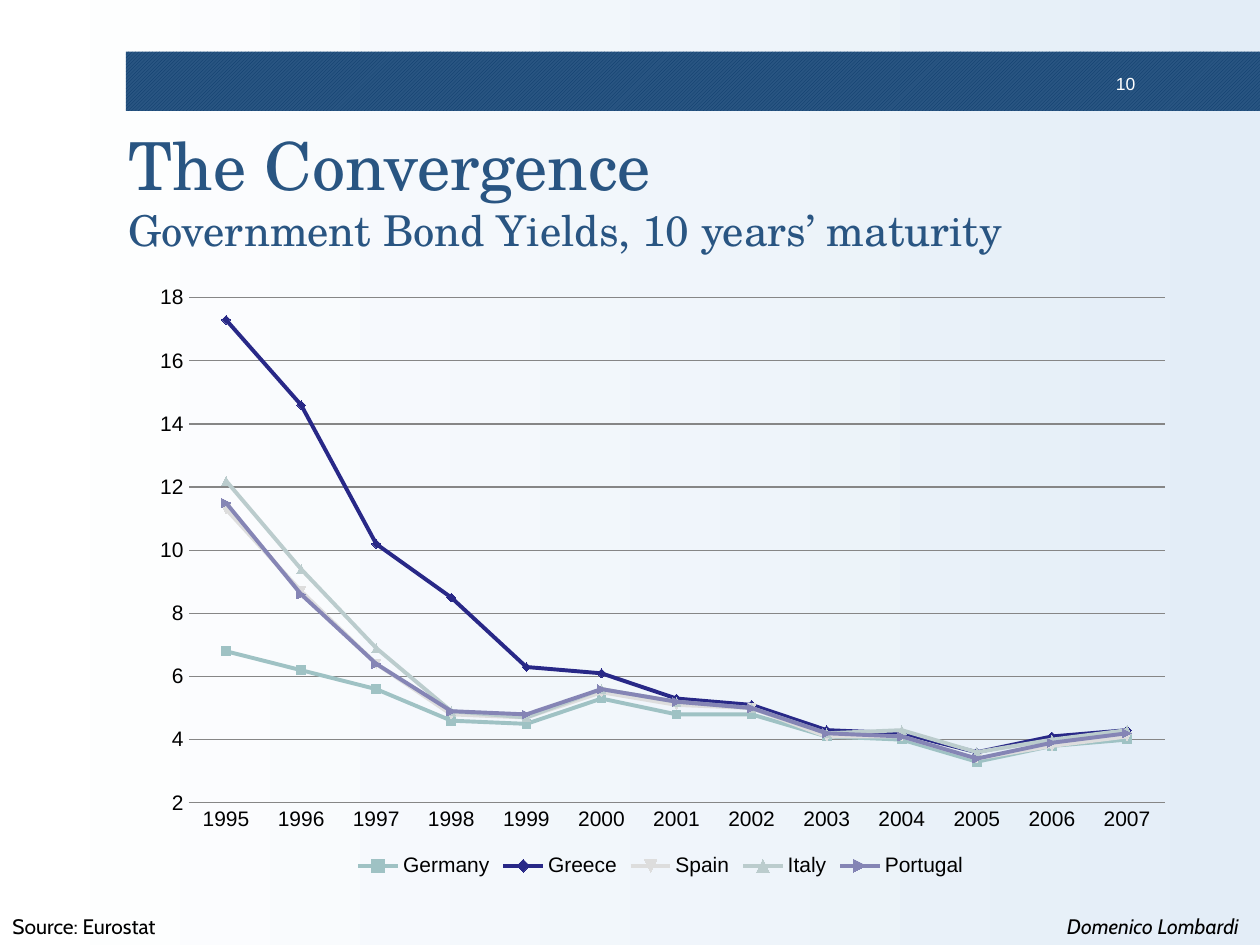
from lxml import etree
from pptx import Presentation
from pptx.chart.data import CategoryChartData
from pptx.dml.color import RGBColor
from pptx.enum.chart import XL_CHART_TYPE, XL_LEGEND_POSITION, XL_TICK_MARK
from pptx.enum.dml import MSO_PATTERN
from pptx.enum.shapes import MSO_SHAPE
from pptx.enum.text import MSO_ANCHOR, PP_ALIGN
from pptx.oxml.ns import qn
from pptx.util import Inches, Pt

LINES = XL_CHART_TYPE.LINE_MARKERS
BOTTOM = XL_LEGEND_POSITION.BOTTOM
NO_TICK = XL_TICK_MARK.NONE
HATCH = MSO_PATTERN.LIGHT_UPWARD_DIAGONAL
RECT = MSO_SHAPE.RECTANGLE
TOP, MIDDLE = MSO_ANCHOR.TOP, MSO_ANCHOR.MIDDLE
LEFT, CENTER, RIGHT = PP_ALIGN.LEFT, PP_ALIGN.CENTER, PP_ALIGN.RIGHT

COLORS = {
    "white": "FFFFFF", "sky": "E3EDF7", "navy": "083868", "blue": "295582",
    "black": "000000", "grid": "868686",
    "Germany": "9FC2C4", "Greece": "282887", "Spain": "DDDDDD",
    "Italy": "BBCCCD", "Portugal": "8585B5",
}

YIELDS = {
    "Germany": (6.8, 6.2, 5.6, 4.6, 4.5, 5.3, 4.8, 4.8, 4.1, 4, 3.3, 3.8, 4),
    "Greece": (17.3, 14.6, 10.2, 8.5, 6.3, 6.1, 5.3, 5.1, 4.3, 4.2, 3.6, 4.1, 4.3),
    "Spain": (11.3, 8.7, 6.4, 4.8, 4.7, 5.5, 5.1, 5, 4.1, 4.1, 3.4, 3.8, 4.1),
    "Italy": (12.2, 9.4, 6.9, 4.9, 4.7, 5.6, 5.2, 5, 4.2, 4.3, 3.6, 4, 4.3),
    "Portugal": (11.5, 8.6, 6.4, 4.9, 4.8, 5.6, 5.2, 5, 4.2, 4.1, 3.4, 3.9, 4.2),
}


def color(name):
    return RGBColor.from_string(COLORS[name])


class Deck:
    def __init__(self):
        self.prs = Presentation()
        self.prs.slide_width = Inches(10)
        self.prs.slide_height = Inches(7.5)
        self.slide = self.prs.slides.add_slide(self.prs.slide_layouts[6])

    def backdrop(self, *names):
        fill = self.slide.background.fill
        fill.gradient()
        fill.gradient_angle = 0
        for stop, name in zip(fill.gradient_stops, names):
            stop.color.rgb = color(name)

    def band(self, box, fore, back):
        shape = self.slide.shapes.add_shape(RECT, *map(Inches, box))
        shape.shadow.inherit = False
        shape.fill.patterned()
        shape.fill.pattern = HATCH
        shape.fill.fore_color.rgb = color(fore)
        shape.fill.back_color.rgb = color(back)
        shape.line.fill.background()

    def text(self, box, words, sizes, face, ink="black", align=LEFT,
             anchor=TOP, pads=(0.1, 0.05), wrap=True, slant=False):
        frame = self.slide.shapes.add_textbox(*map(Inches, box)).text_frame
        frame.word_wrap = wrap
        frame.vertical_anchor = anchor
        frame.margin_left = frame.margin_right = Inches(pads[0])
        frame.margin_top = frame.margin_bottom = Inches(pads[1])
        para = frame.paragraphs[0]
        para.text = words
        para.alignment = align
        for run, size in zip(para.runs, sizes):
            run.font.size = Pt(size)
            run.font.name = face
            run.font.italic = slant
            run.font.color.rgb = color(ink)

    def chart(self, box, years, table, plot):
        data = CategoryChartData()
        data.categories = [str(year) for year in years]
        for name, values in table.items():
            data.add_series(name, values)
        chart = self.slide.shapes.add_chart(LINES, *map(Inches, box), data).chart
        chart.has_title = False
        chart.font.name = "Arial"
        chart.font.size = Pt(12)
        chart.font.color.rgb = color("black")
        chart.has_legend = True
        chart.legend.position = BOTTOM
        chart.legend.include_in_layout = False
        chart.plots[0].vary_by_categories = False
        for line in chart.plots[0].series:
            line.smooth = False
            line.format.line.width = Pt(2.25)
            line.format.line.color.rgb = color(line.name)
        for axis in (chart.category_axis, chart.value_axis):
            axis.major_tick_mark = axis.minor_tick_mark = NO_TICK
        chart.category_axis.format.line.color.rgb = color("grid")
        scale = chart.value_axis
        scale.minimum_scale, scale.maximum_scale, scale.major_unit = 2, 18, 2
        scale.tick_labels.number_format = "#,##0"
        scale.tick_labels.number_format_is_linked = False
        scale.format.line.fill.background()
        scale.major_gridlines.format.line.color.rgb = color("grid")
        self.place(chart, plot)

    def place(self, chart, plot):
        area = chart.plots[0]._element.getparent()
        for old in area.findall(qn("c:layout")):
            area.remove(old)
        layout = etree.Element(qn("c:layout"))
        area.insert(0, layout)
        manual = etree.SubElement(layout, qn("c:manualLayout"))
        parts = [("layoutTarget", "inner"), ("xMode", "edge"), ("yMode", "edge")]
        for tag, value in parts + list(zip("xywh", plot)):
            etree.SubElement(manual, qn("c:" + tag)).set("val", str(value))


def main():
    deck = Deck()
    deck.backdrop("white", "sky")
    deck.band((1, 0.41, 9, 0.47), "navy", "blue")
    deck.text((8.67, 0.54, 0.41, 0.23), "10", [10], "Arial", "white",
              align=RIGHT, pads=(0.07, 0.04))
    deck.text((0.98, 0.94, 8.05, 1.13),
              "The Convergence\vGovernment Bond Yields, 10 years’ maturity",
              [37.8, 24.3], "TeX Gyre Schola", "blue",
              anchor=MIDDLE, pads=(0.04, 0.04))
    deck.chart((1.08, 2.17, 8.33, 4.83), range(1995, 2008), YIELDS,
               (0.05, 0.04, 0.93, 0.83))
    deck.text((0, 7.2, 3.5, 0.3), "Source: Eurostat", [12], "Cabin")
    deck.text((8.3, 7.2, 1.7, 0.3), "Domenico Lombardi", [12], "Cabin",
              align=CENTER, wrap=False, slant=True)
    deck.prs.save("out.pptx")


if __name__ == "__main__":
    main()
